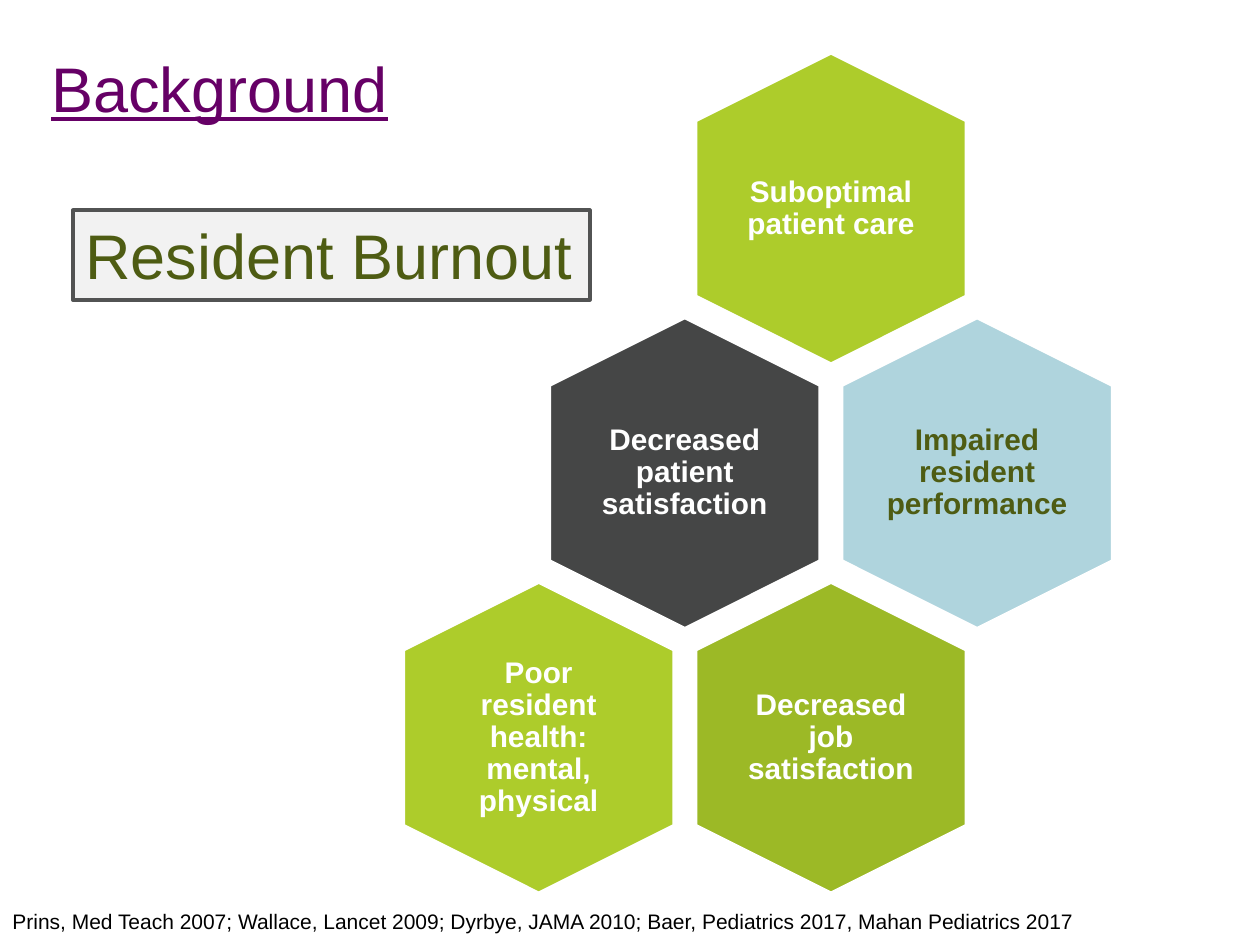
"""Build the Background slide on the effects of resident burnout."""
from pptx import Presentation
from pptx.dml.color import RGBColor
from pptx.enum.shapes import MSO_SHAPE
from pptx.enum.text import MSO_ANCHOR, PP_ALIGN
from pptx.util import Inches, Pt


def rgb(value):
    return RGBColor.from_string(value)


def add_text(sp, text, size, color, bold=False, underline=False, wrap=False,
             align=PP_ALIGN.LEFT, anchor=MSO_ANCHOR.TOP, spacing=1.0, inset=None):
    tf = sp.text_frame
    tf.word_wrap = wrap
    tf.vertical_anchor = anchor
    if inset is not None:
        tf.margin_left = tf.margin_right = Inches(inset)
        tf.margin_top = tf.margin_bottom = Inches(inset)
    p = tf.paragraphs[0]
    p.alignment = align
    p.line_spacing = spacing
    r = p.add_run()
    r.text = text
    r.font.name = "Arial"
    r.font.size = Pt(size)
    r.font.bold = bold
    r.font.underline = underline
    r.font.color.rgb = rgb(color)


prs = Presentation()
prs.slide_width, prs.slide_height = Inches(10), Inches(7.5)
s = prs.slides.add_slide(prs.slide_layouts[6])

title = s.shapes.add_textbox(Inches(0.31), Inches(0.34), Inches(9.25), Inches(0.95))
add_text(title, "Background", 36, "660066", underline=True, wrap=True)

HEX_W, HEX_H = 2.47, 2.15
LABEL_W, LABEL_H = 1.48, 1.7
LEFT, TOP = 3.04, 0.58
STEP_X, STEP_Y = 1.16, 2.1

# column (half steps), row, label, fill, text color, inset
hexagons = [
    (2, 0, "Suboptimal patient care", "ADCC2B", "FFFFFF", 0.07),
    (1, 1, "Decreased patient satisfaction", "454646", "FFFFFF", 0.07),
    (3, 1, "Impaired resident performance", "AFD4DD", "4E5C13", 0),
    (2, 2, "Decreased job satisfaction", "9CB926", "FFFFFF", 0.07),
    (0, 2, "Poor resident health: mental, physical", "ADCC2B", "FFFFFF", 0),
]
for col, row, label, fill, color, inset in hexagons:
    x, y = LEFT + col * STEP_X, TOP + row * STEP_Y
    sp = s.shapes.add_shape(MSO_SHAPE.HEXAGON, Inches(x), Inches(y),
                            Inches(HEX_W), Inches(HEX_H))
    sp.rotation = 90
    sp.shadow.inherit = False
    sp.adjustments[0] = 0.25
    sp.fill.solid()
    sp.fill.fore_color.rgb = rgb(fill)
    sp.line.color.rgb = rgb("FFFFFF")
    sp.line.width = Pt(2)
    box = s.shapes.add_textbox(Inches(x + (HEX_W - LABEL_W) / 2),
                               Inches(y + (HEX_H - LABEL_H) / 2),
                               Inches(LABEL_W), Inches(LABEL_H))
    add_text(box, label, 17, color, bold=True, wrap=True, align=PP_ALIGN.CENTER,
             anchor=MSO_ANCHOR.MIDDLE, spacing=0.9, inset=inset)

burnout = s.shapes.add_shape(MSO_SHAPE.RECTANGLE, Inches(0.58), Inches(1.67),
                             Inches(4.1), Inches(0.71))
burnout.shadow.inherit = False
burnout.fill.solid()
burnout.fill.fore_color.rgb = rgb("F2F2F2")
burnout.line.color.rgb = rgb("525353")
burnout.line.width = Pt(2.25)
add_text(burnout, "Resident Burnout", 36, "4E5C13")

refs = s.shapes.add_textbox(Inches(0), Inches(7.16), Inches(8.69), Inches(0.3))
add_text(refs, "Prins, Med Teach 2007; Wallace, Lancet 2009; Dyrbye, JAMA 2010; "
         "Baer, Pediatrics 2017, Mahan Pediatrics 2017", 12, "000000")

prs.save("out.pptx")
